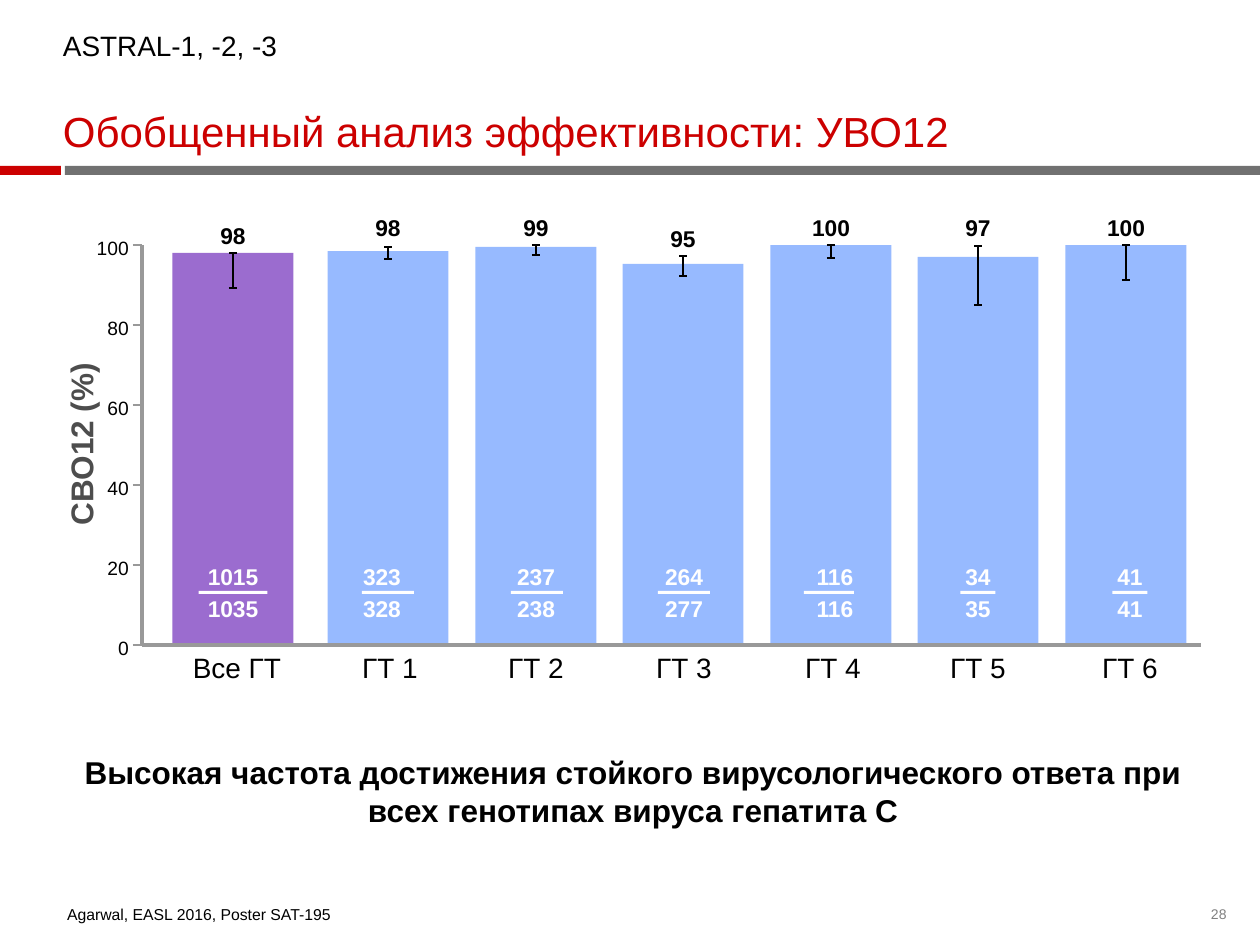
from lxml.etree import SubElement
from pptx import Presentation
from pptx.dml.color import RGBColor
from pptx.enum.shapes import MSO_CONNECTOR, MSO_SHAPE
from pptx.enum.text import MSO_ANCHOR as Anchor, PP_ALIGN as Align
from pptx.oxml.ns import qn
from pptx.util import Pt

PX = 914400 / 126  # EMU in one px
COLORS = {
    "red": "CC0000", "rule": "717171", "number": "808080", "axis": "999999",
    "axis_title": "4D4D4D", "all": "9B6CCF", "genotype": "97BAFF",
    "black": "000000", "white": "FFFFFF",
}

# Chart frame
AXIS_X, AXIS_RIGHT, BASE_Y = 142, 1201, 645
PX_PER_PERCENT = 4
BAR_WIDTH, CAP_HALF = 121, 4
FIRST_CENTER, GENOTYPE_CENTER, GENOTYPE_STEP = 233, 388, 147.6

# name, shown value, bar height, (low, high), label top, numerator,
# denominator, fraction line width, shifts of the name, digits and line
COLUMNS = [
    ("Все ГТ", "98", 98, (89.25, 98), 222, "1015", "1035", 69, 4, 0, 0),
    ("ГТ 1", "98", 98.5, (96.5, 99.5), 214, "323", "328", 52, 2, -6, 0),
    ("ГТ 2", "99", 99.5, (97.5, 100), 214, "237", "238", 52, 0, 0, 1),
    ("ГТ 3", "95", 95.25, (92.25, 97.25), 225, "264", "277", 52, 1, 1, 1),
    ("ГТ 4", "100", 100, (96.75, 100), 214, "116", "116", 50, 2, 4, -2),
    ("ГТ 5", "97", 97, (85, 99.75), 214, "34", "35", 35, 0, 0, 0),
    ("ГТ 6", "100", 100, (91.25, 100), 214, "41", "41", 35, 4, 4, 4),
]


def emu(px):
    return round(px * PX)


def rgb(name):
    return RGBColor.from_string(COLORS[name])


def percent_y(value):
    return round(BASE_Y - value * PX_PER_PERCENT)


def add_text(page, text, at, size, color="black", bold=False, align=Align.LEFT,
             anchor=Anchor.TOP, wrap=True, spacing=None):
    box = page.shapes.add_textbox(*map(emu, at))
    frame = box.text_frame
    frame.margin_left = frame.margin_right = 0
    frame.margin_top = frame.margin_bottom = 0
    frame.word_wrap = wrap
    frame.vertical_anchor = anchor
    frame.text = text
    para = frame.paragraphs[0]
    para.alignment = align
    if spacing:
        para.line_spacing = spacing
    font = para.runs[0].font
    font.name, font.size, font.bold = "Arial", Pt(size), bold
    font.color.rgb = rgb(color)
    return box


def add_label(page, text, center, top, size, color="black", bold=False):
    width = 90
    add_text(page, text, (center - width / 2, top, width, 28), size, color,
             bold, Align.CENTER, wrap=False)


def add_block(page, at, color):
    block = page.shapes.add_shape(MSO_SHAPE.RECTANGLE, *map(emu, at))
    block.shadow.inherit = False
    block.fill.solid()
    block.fill.fore_color.rgb = rgb(color)
    block.line.fill.background()


def add_line(page, start, end, color):
    line = page.shapes.add_connector(MSO_CONNECTOR.STRAIGHT,
                                     *map(emu, (*start, *end)))
    line.line.color.rgb = rgb(color)
    line.line.width = 0
    SubElement(line._element.spPr, qn("a:effectLst"))


def add_strokes(page, strokes, color):
    """Draw separate straight strokes as one outline."""
    builder = page.shapes.build_freeform(*strokes[0][0], scale=PX)
    builder.add_line_segments([strokes[0][1]], close=False)
    for start, end in strokes[1:]:
        builder.move_to(*start)
        builder.add_line_segments([end], close=False)
    outline = builder.convert_to_shape()
    outline.shadow.inherit = False
    outline.fill.background()
    outline.line.color.rgb = rgb(color)
    outline.line.width = 0


def add_whisker(page, center, low, high):
    bottom, top = percent_y(low), percent_y(high)
    left, right = center - CAP_HALF, center + CAP_HALF
    add_strokes(page, [((left, top), (right, top)),
                       ((left, bottom), (right, bottom)),
                       ((center, top), (center, bottom))], "black")


def add_axes(page):
    ticks = range(0, 101, 20)
    add_line(page, (AXIS_X, BASE_Y), (AXIS_X, percent_y(100)), "axis")
    add_strokes(page, [((AXIS_X - 9, percent_y(tick)), (AXIS_X, percent_y(tick)))
                       for tick in ticks], "axis")
    add_line(page, (AXIS_X, BASE_Y), (AXIS_RIGHT, BASE_Y), "axis")
    for tick in ticks:
        add_text(page, str(tick), (89, percent_y(tick) - 9, 40, 26), 11,
                 align=Align.RIGHT, wrap=False)
    title = add_text(page, "СВО12 (%)", (-21, 425, 204, 38), 18, "axis_title",
                     True, Align.CENTER)
    title.rotation = 270


def add_column(page, center, color, column):
    (name, shown, value, limits, label_top, numerator, denominator,
     line_width, name_shift, digit_shift, line_shift) = column
    top = percent_y(value)
    add_block(page, (center - BAR_WIDTH / 2, top, BAR_WIDTH, BASE_Y - top), color)
    add_whisker(page, center, *limits)
    add_label(page, shown, center, label_top, 13, bold=True)
    add_label(page, name, center + name_shift, 651, 16)
    # Patients with a response over all patients
    for digits, digits_top in ((numerator, 563), (denominator, 595)):
        add_label(page, digits, center + digit_shift, digits_top, 13, "white", True)
    add_block(page, (center + line_shift - line_width / 2, 591, line_width, 3),
              "white")


def main():
    deck = Presentation()
    deck.slide_width, deck.slide_height = emu(1260), emu(945)
    page = deck.slides.add_slide(deck.slide_layouts[6])

    # Header
    add_block(page, (65, 166, 1195, 9), "rule")
    add_block(page, (0, 166, 61, 9), "red")
    add_text(page, "Обобщенный анализ эффективности: УВО12", (63, 64, 1134, 93),
             24, "red", anchor=Anchor.BOTTOM, spacing=0.9)
    add_text(page, "ASTRAL-1, -2, -3", (63, 21, 1134, 42), 16,
             anchor=Anchor.BOTTOM, spacing=0.9)

    # Bars by genotype
    for index, column in enumerate(COLUMNS):
        if index == 0:
            center, color = FIRST_CENTER, "all"
        else:
            center = round(GENOTYPE_CENTER + (index - 1) * GENOTYPE_STEP)
            color = "genotype"
        add_column(page, center, color, column)
    add_axes(page)

    # Conclusion and footer
    add_text(page, "Высокая частота достижения стойкого вирусологического ответа "
             "при всех генотипах вируса гепатита С", (45, 753, 1176, 77), 18,
             bold=True, align=Align.CENTER)
    add_text(page, "Agarwal, EASL 2016, Poster SAT-195", (67, 901, 420, 23), 9,
             anchor=Anchor.BOTTOM)
    add_text(page, "28", (1211, 907, 44, 34), 8, "number", spacing=0.9)

    deck.save("out.pptx")


if __name__ == "__main__":
    main()
